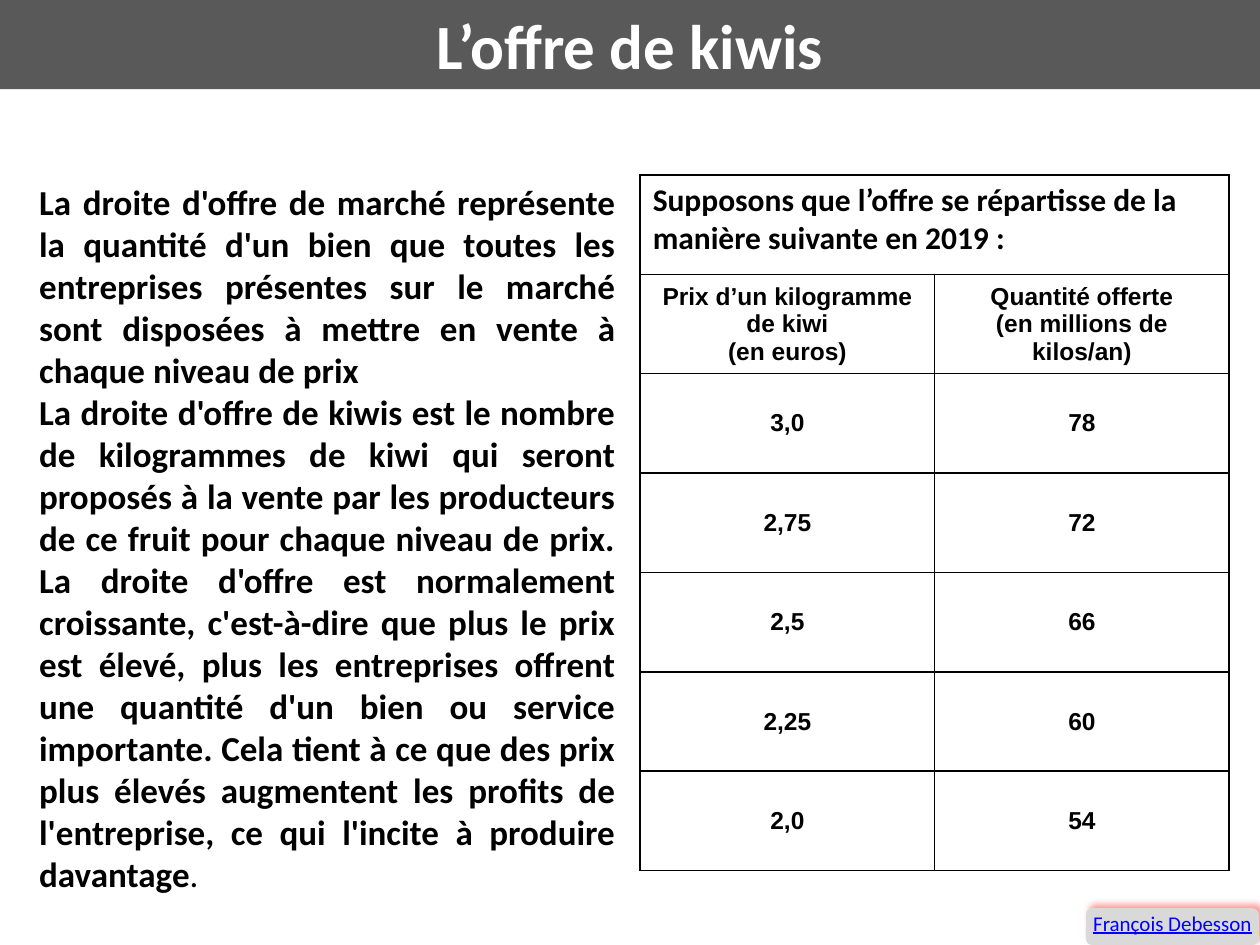
from lxml.etree import fromstring
from pptx import Presentation
from pptx.dml.color import RGBColor
from pptx.enum.shapes import MSO_SHAPE
from pptx.enum.text import MSO_ANCHOR, PP_ALIGN
from pptx.util import Pt

TITLE = "L’offre de kiwis"
BODY = [
    "La droite d'offre de marché représente la quantité d'un bien que toutes les "
    "entreprises présentes sur le marché sont disposées à mettre en vente à chaque "
    "niveau de prix",
    "La droite d'offre de kiwis est le nombre de kilogrammes de kiwi qui seront proposés "
    "à la vente par les producteurs de ce fruit pour chaque niveau de prix. La droite "
    "d'offre est normalement croissante, c'est-à-dire que plus le prix est élevé, plus "
    "les entreprises offrent une quantité d'un bien ou service importante. Cela tient à "
    "ce que des prix plus élevés augmentent les profits de l'entreprise, ce qui l'incite "
    "à produire davantage",
]
INTRO = "Supposons que l’offre se répartisse de la manière suivante en 2019 :"
SUPPLY = [
    ("Prix d’un kilogramme de kiwi\n(en euros)", "Quantité offerte\n(en millions de kilos/an)"),
    ("3,0", "78"),
    ("2,75", "72"),
    ("2,5", "66"),
    ("2,25", "60"),
    ("2,0", "54"),
]
AUTHOR = "François Debesson"

THEME = {
    "banner": "595959", "badge": "D9D9D9", "glow": "FF0000",
    "light": "FFFFFF", "dark": "000000", "link": "0000FF",
    "head": "Calibri", "data": "Arial",
    "title": 36, "body": 20, "intro": 18, "cell": 14, "author": 12,
}
NS = 'xmlns:a="http://schemas.openxmlformats.org/drawingml/2006/main"'
COL_W, ROW_H = 168.3, 56.8


def rgb(name):
    return RGBColor.from_string(THEME[name])


def style(tf, size, color="dark", font="head", bold=True, align=None):
    for p in tf.paragraphs:
        p.alignment = align
        for r in p.runs:
            r.font.name, r.font.size, r.font.bold = THEME[font], Pt(THEME[size]), bold
            r.font.color.rgb = rgb(color)


def inset(tf, gap):
    tf.word_wrap = True
    tf.margin_left = tf.margin_right = tf.margin_top = tf.margin_bottom = Pt(gap)


def add_panel(s, kind, box, fill, text, gap):
    sp = s.shapes.add_shape(kind, *map(Pt, box))
    sp.shadow.inherit = False
    sp.fill.solid()
    sp.fill.fore_color.rgb = rgb(fill)
    sp.line.fill.background()
    inset(sp.text_frame, gap)
    sp.text_frame.text = text
    return sp


def add_borders(cell):
    tc_pr = cell._tc.get_or_add_tcPr()
    for i, side in enumerate("LRTB"):
        tc_pr.insert(i, fromstring(
            f'<a:ln{side} {NS} w="12700"><a:solidFill><a:srgbClr val="{THEME["dark"]}"/>'
            f'</a:solidFill></a:ln{side}>'))


def add_body(s):
    tf = s.shapes.add_textbox(Pt(19.5), Pt(100), Pt(335), Pt(417.6)).text_frame
    inset(tf, 2.9)
    tf.text = "\n".join(BODY)
    stop = tf.paragraphs[-1].add_run()
    stop.text = "."
    style(tf, "body", align=PP_ALIGN.JUSTIFY)
    stop.font.bold = False


def add_supply_table(s):
    rows = [(INTRO, "")] + SUPPLY
    tbl = s.shapes.add_table(len(rows), 2, Pt(365.8), Pt(100),
                             Pt(2 * COL_W), Pt(len(rows) * ROW_H)).table
    for col in tbl.columns:
        col.width = Pt(COL_W)
    for i, row in enumerate(rows):
        tbl.rows[i].height = Pt(ROW_H)
        for j, text in enumerate(row):
            cell = tbl.cell(i, j)
            cell.fill.background()
            add_borders(cell)
            cell.text = text
            if i == 0:
                style(cell.text_frame, "intro")
                continue
            cell.vertical_anchor = MSO_ANCHOR.MIDDLE
            cell.margin_left = cell.margin_right = Pt(5)
            cell.margin_top = cell.margin_bottom = Pt(0)
            style(cell.text_frame, "cell", font="data", align=PP_ALIGN.CENTER)
    tbl.cell(0, 0).merge(tbl.cell(0, 1))


def add_author(s):
    sp = add_panel(s, MSO_SHAPE.ROUNDED_RECTANGLE, (620.6, 519, 98.8, 21), "badge", AUTHOR, 0)
    tf = sp.text_frame
    tf.vertical_anchor = MSO_ANCHOR.TOP
    style(tf, "author", "link", bold=False, align=PP_ALIGN.CENTER)
    tf.paragraphs[0].runs[0].font.underline = True
    sp._element.spPr[-1].append(fromstring(
        f'<a:outerShdw {NS} blurRad="50800" dist="38100" dir="18900000" algn="bl" '
        f'rotWithShape="0"><a:srgbClr val="{THEME["glow"]}"><a:alpha val="40000"/>'
        f'</a:srgbClr></a:outerShdw>'))


def main():
    """Build the kiwi supply slide."""
    prs = Presentation()
    prs.slide_width, prs.slide_height = Pt(720), Pt(540)
    s = prs.slides.add_slide(prs.slide_layouts[6])
    banner = add_panel(s, MSO_SHAPE.RECTANGLE, (0, 0, 720, 51), "banner", TITLE, 2.9)
    banner.text_frame.vertical_anchor = MSO_ANCHOR.MIDDLE
    style(banner.text_frame, "title", "light", align=PP_ALIGN.CENTER)
    add_body(s)
    add_supply_table(s)
    add_author(s)
    prs.save("out.pptx")


if __name__ == "__main__":
    main()
